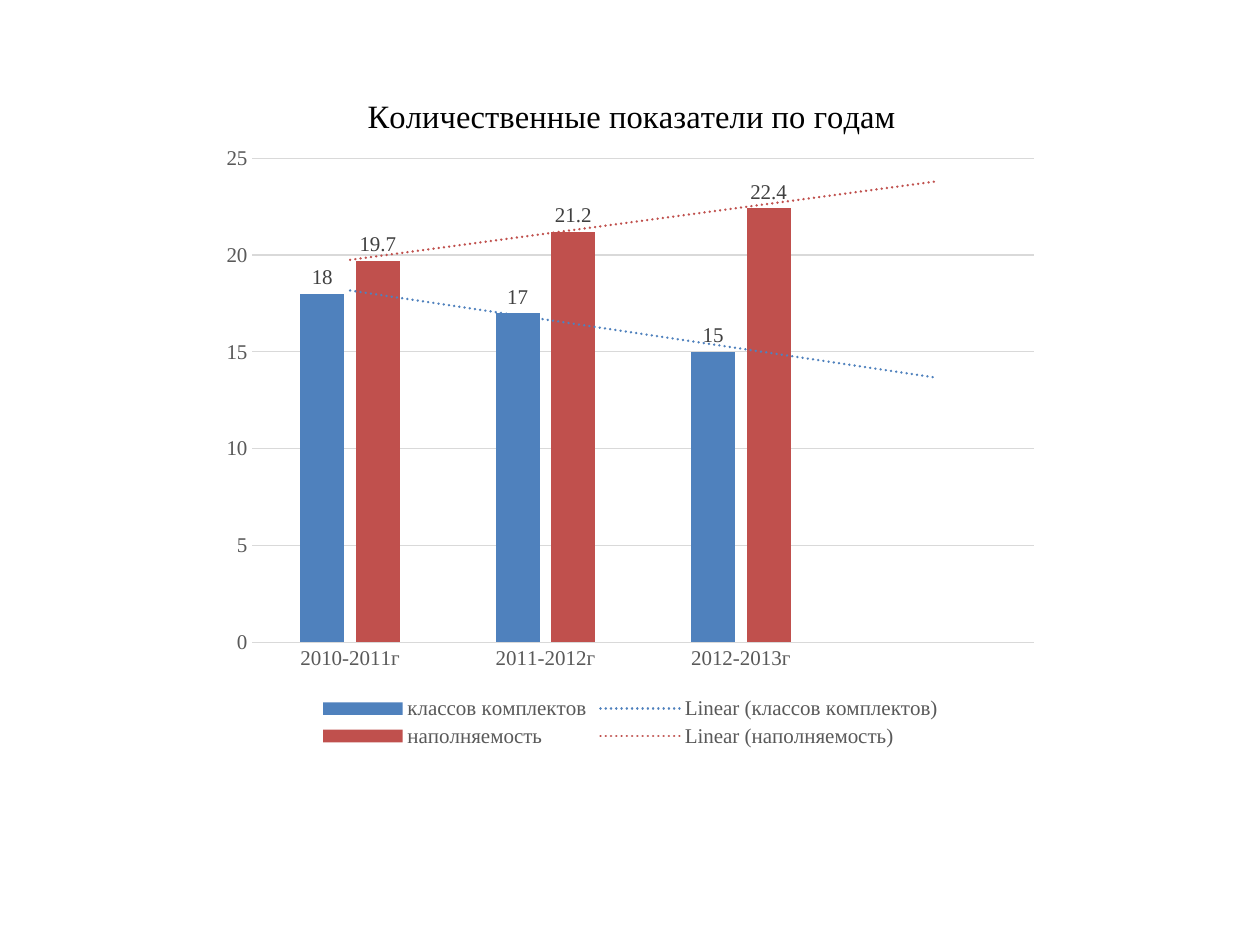
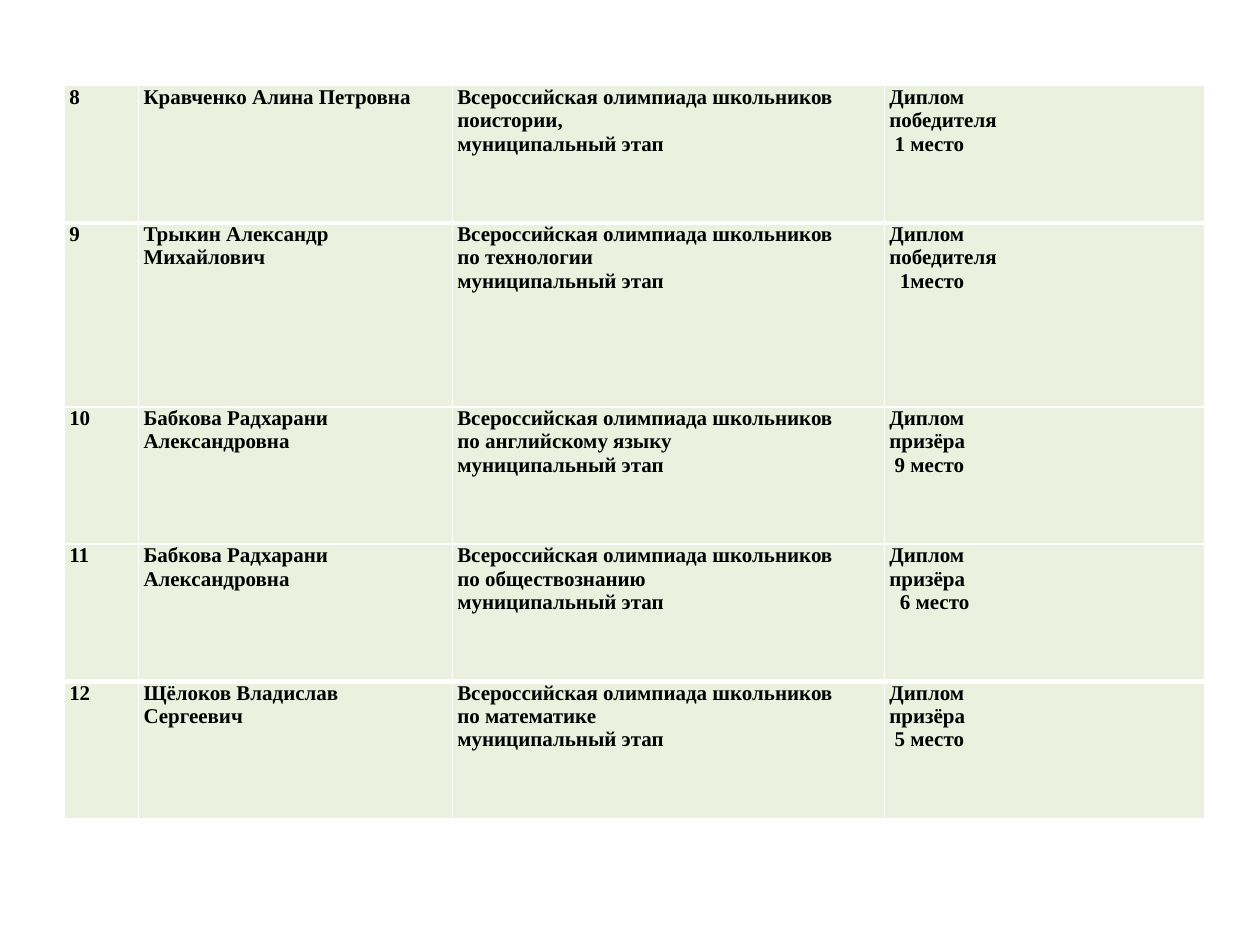
"""Build two school slides: yearly class figures and olympiad awards."""
import lxml.etree
import pptx
import pptx.chart.data
import pptx.dml.color
import pptx.enum.chart
import pptx.oxml
import pptx.oxml.ns
import pptx.util

Inches, Pt = pptx.util.Inches, pptx.util.Pt
qn = pptx.oxml.ns.qn
FONT = "Times New Roman"
COLORS = {
    "text": "000000", "axis": "595959", "label": "404040", "grid": "D9D9D9",
    "cell": "EBF1DE", "border": "FFFFFF",
}
SERIES = [
    ("классов комплектов", (18, 17, 15, None), "4F81BD"),
    ("наполняемость", (19.7, 21.2, 22.4, None), "C0504D"),
]
YEARS = ["2010-2011г", "2011-2012г", "2012-2013г", ""]
OLYMPIAD, STAGE = "Всероссийская олимпиада школьников", "муниципальный этап"
WINNER, RUNNER_UP = "победителя", "призёра"
AWARDS = [
    ("8", ["Кравченко Алина Петровна"], "поистории,", WINNER, "1 место", 3),
    ("9", ["Трыкин Александр Михайлович"], "по технологии", WINNER, "1место", 6),
    ("10", ["Бабкова Радхарани Александровна"], "по английскому языку",
     RUNNER_UP, "9 место", 3),
    ("11", ["Бабкова Радхарани Александровна"], "по обществознанию",
     RUNNER_UP, "6 место", 6),
    ("12", ["Щёлоков Владислав", "Сергеевич"], "по математике",
     RUNNER_UP, "5 место", 3),
]
COL_WIDTHS = (0.59, 2.49, 3.43, 2.54)
ROW_HEIGHTS = (1.09, 1.46, 1.09, 1.09, 1.09)
THICK_RULES = (1, 4)


def rgb(value):
    """Turn a hex string into a colour."""
    return pptx.dml.color.RGBColor.from_string(value)


def style_font(font, size, color, bold=False):
    """Apply the shared typeface with a size, colour and weight."""
    font.name, font.size, font.bold = FONT, Pt(size), bold
    font.color.rgb = rgb(color)


def style_line(line, color, width=0.75):
    """Set the colour and width of a line."""
    line.color.rgb = rgb(color)
    line.width = Pt(width)


def place(element, index, **fractions):
    """Give a chart part a manual layout in fractions of the chart."""
    for old in element.findall(qn("c:layout")):
        element.remove(old)
    layout = lxml.etree.Element(qn("c:layout"))
    manual = lxml.etree.SubElement(layout, qn("c:manualLayout"))
    settings = {"xMode": "edge", "yMode": "edge", **fractions}
    if "w" in fractions:
        settings = {"layoutTarget": "inner", **settings}
    for tag, value in settings.items():
        lxml.etree.SubElement(manual, qn("c:" + tag)).set("val", str(value))
    element.insert(index, layout)


def add_trend(series, color):
    """Add a dotted linear trend line to a series."""
    trend = pptx.oxml.parse_xml(
        f'<c:trendline {pptx.oxml.ns.nsdecls("c", "a")}>'
        f'<c:spPr><a:ln w="{Pt(1.5)}" cap="rnd"><a:solidFill>'
        f'<a:srgbClr val="{color}"/></a:solidFill>'
        '<a:prstDash val="sysDot"/></a:ln></c:spPr>'
        '<c:trendlineType val="linear"/><c:dispRSqr val="0"/>'
        '<c:dispEq val="0"/></c:trendline>')
    series._element.find(qn("c:cat")).addprevious(trend)


def style_series(series, color):
    """Colour a series, label its values and add its trend."""
    series.format.fill.solid()
    series.format.fill.fore_color.rgb = rgb(color)
    series.invert_if_negative = False
    labels = series.data_labels
    labels.show_value = True
    labels.position = pptx.enum.chart.XL_LABEL_POSITION.OUTSIDE_END
    style_font(labels.font, 12, COLORS["label"])
    add_trend(series, color)


def style_axes(chart):
    """Style both axes and the horizontal grid."""
    for axis in (chart.category_axis, chart.value_axis):
        axis.major_tick_mark = pptx.enum.chart.XL_TICK_MARK.NONE
        axis.minor_tick_mark = pptx.enum.chart.XL_TICK_MARK.NONE
        style_font(axis.tick_labels.font, 12, COLORS["axis"])
    style_line(chart.category_axis.format.line, COLORS["grid"])
    chart.value_axis.format.line.fill.background()
    style_line(chart.value_axis.major_gridlines.format.line, COLORS["grid"])


def add_title(chart, text):
    """Write the chart title and set its place."""
    p = chart.chart_title.text_frame.paragraphs[0]
    r = p.add_run()
    r.text = text
    style_font(r.font, 18.6, COLORS["text"])
    place(chart.chart_title._element, 1, x=0.18, y=0.035)


def add_figures_chart(s):
    """Add the clustered columns with trends."""
    data = pptx.chart.data.CategoryChartData()
    data.categories = YEARS
    for name, values, _ in SERIES:
        data.add_series(name, values)
    chart = s.shapes.add_chart(
        pptx.enum.chart.XL_CHART_TYPE.COLUMN_CLUSTERED, Inches(1.67),
        Inches(0.52), Inches(6.67), Inches(5.45), data).chart
    style_font(chart.font, 10, COLORS["text"])
    add_title(chart, "Количественные показатели по годам")
    plot = chart.plots[0]
    plot.gap_width, plot.overlap, plot.vary_by_categories = 219, -27, False
    for series, (_, _, color) in zip(plot.series, SERIES):
        style_series(series, color)
    style_axes(chart)
    place(chart._chartSpace.chart.plotArea, 0, x=0.05, y=0.135, w=0.93, h=0.705)
    chart.has_legend = True
    chart.legend.position = pptx.enum.chart.XL_LEGEND_POSITION.BOTTOM
    chart.legend.include_in_layout = False
    style_font(chart.legend.font, 12, COLORS["axis"])


def add_borders(cell, top, bottom):
    """Draw the four borders of a cell."""
    tcPr = cell._tc.get_or_add_tcPr()
    for side, width in zip("LRTB", (1, 1, top, bottom)):
        tcPr.append(pptx.oxml.parse_xml(
            f'<a:ln{side} {pptx.oxml.ns.nsdecls("a")} w="{Pt(width)}">'
            f'<a:solidFill><a:srgbClr val="{COLORS["border"]}"/></a:solidFill>'
            f'</a:ln{side}>'))


def fill_cell(cell, lines, last_indent=0):
    """Write bold lines into a cell, indenting the last one."""
    cell.margin_left = cell.margin_right = Inches(0.04)
    cell.margin_top = cell.margin_bottom = 0
    cell.fill.solid()
    cell.fill.fore_color.rgb = rgb(COLORS["cell"])
    tf = cell.text_frame
    for i, line in enumerate(lines):
        p = tf.add_paragraph() if i else tf.paragraphs[0]
        r = p.add_run()
        r.text = line
        style_font(r.font, 12, COLORS["text"], bold=True)
    if last_indent:
        p._p.get_or_add_pPr().set("marL", str(Pt(last_indent)))


def add_awards_table(s):
    """Add the table of olympiad awards."""
    table = s.shapes.add_table(
        len(AWARDS), len(COL_WIDTHS), Inches(0.51), Inches(0.68),
        Inches(sum(COL_WIDTHS)), Inches(sum(ROW_HEIGHTS))).table
    table.first_row = table.horz_banding = False
    for column, width in zip(table.columns, COL_WIDTHS):
        column.width = Inches(width)
    for i, (number, name, subject, rank, result, indent) in enumerate(AWARDS):
        table.rows[i].height = Inches(ROW_HEIGHTS[i])
        top, bottom = (3 if rule in THICK_RULES else 1 for rule in (i, i + 1))
        contents = ([number], name, [OLYMPIAD, subject, STAGE],
                    ["Диплом", rank, result])
        for cell, lines, shift in zip(table.rows[i].cells, contents,
                                      (0, 0, 0, indent)):
            add_borders(cell, top, bottom)
            fill_cell(cell, lines, shift)


def main():
    """Build and save the slides."""
    prs = pptx.Presentation()
    prs.slide_width, prs.slide_height = Inches(10), Inches(7.5)
    for add_content in (add_figures_chart, add_awards_table):
        add_content(prs.slides.add_slide(prs.slide_layouts[6]))
    prs.save("out.pptx")


if __name__ == "__main__":
    main()
